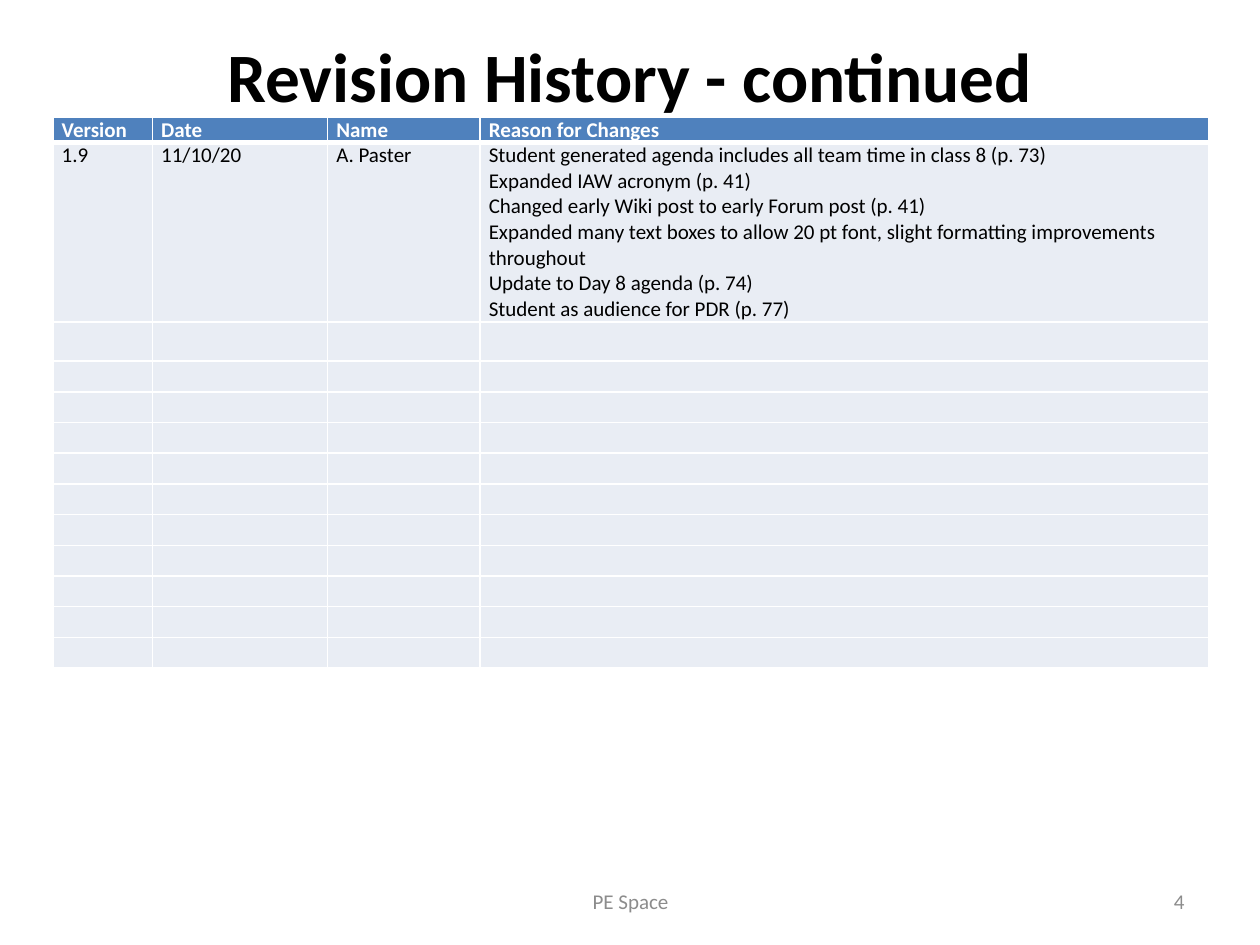
from lxml import etree
from pptx import Presentation
from pptx.dml.color import RGBColor
from pptx.enum.text import MSO_ANCHOR, PP_ALIGN
from pptx.oxml.ns import qn
from pptx.util import Inches, Pt

CENTER, RIGHT = PP_ALIGN.CENTER, PP_ALIGN.RIGHT
MIDDLE = MSO_ANCHOR.MIDDLE
FONT = "Calibri"
COLORS = {"text": "000000", "header": "4F81BD", "band": "E9EDF4",
          "line": "FFFFFF", "footer": "8C8C8C"}

COLUMN_WIDTHS = [0.79, 1.39, 1.21, 5.78]
ROW_HEIGHTS = [0.2, 1.42, 0.31] + [0.244] * 10
HEADERS = ["Version", "Date", "Name", "Reason for Changes"]
CHANGES = [
    "Student generated agenda includes all team time in class 8 (p. 73)",
    "Expanded IAW acronym (p. 41)",
    "Changed early Wiki post to early Forum post (p. 41)",
    "Expanded many text boxes to allow 20 pt font, slight formatting improvements throughout",
    "Update to Day 8 agenda (p. 74)",
    "Student as audience for PDR (p. 77)",
]
REVISION = ["1.9", "11/10/20", "A. Paster", "\n".join(CHANGES)]


def style_paragraph(para, size, color, bold=False, align=None):
    para.alignment = align
    font = para.font
    font.name, font.size, font.bold = FONT, Pt(size), bold
    font.color.rgb = RGBColor.from_string(COLORS[color])


def add_title(page, text):
    title = page.shapes.title
    title.left, title.top = Inches(0.5), Inches(0.3)
    title.width, title.height = Inches(9), Inches(1.25)
    title.text_frame.vertical_anchor = MIDDLE
    para = title.text_frame.paragraphs[0]
    para.text = text
    para.add_line_break()  # the open second line lifts the title above the table
    style_paragraph(para, 39.6, "text", bold=True, align=CENTER)


def set_borders(cell, top, bottom):
    properties = cell._tc.get_or_add_tcPr()
    for side, width in (("L", 1), ("R", 1), ("T", top), ("B", bottom)):
        line = etree.SubElement(properties, qn(f"a:ln{side}"), w=str(Pt(width)))
        fill = etree.SubElement(line, qn("a:solidFill"))
        etree.SubElement(fill, qn("a:srgbClr"), val=COLORS["line"])


def fill_cell(cell, text, is_header):
    cell.margin_left = cell.margin_right = Inches(0.07)
    cell.margin_top = cell.margin_bottom = 0
    cell.fill.solid()
    cell.fill.fore_color.rgb = RGBColor.from_string(
        COLORS["header" if is_header else "band"])
    cell.text = text
    for para in cell.text_frame.paragraphs:
        style_paragraph(para, 12, "line" if is_header else "text", bold=is_header)
        if not text:  # keeps an empty row from growing to the default size
            etree.SubElement(para._p, qn("a:endParaRPr"), sz="1200")


def add_revision_table(page):
    frame = page.shapes.add_table(
        len(ROW_HEIGHTS), len(COLUMN_WIDTHS), Inches(0.42), Inches(0.93),
        Inches(sum(COLUMN_WIDTHS)), Inches(sum(ROW_HEIGHTS)))
    table = frame.table
    table.horz_banding = False
    for column, width in zip(table.columns, COLUMN_WIDTHS):
        column.width = Inches(width)
    blank_rows = [[""] * len(HEADERS)] * (len(ROW_HEIGHTS) - 2)
    for index, texts in enumerate([HEADERS, REVISION] + blank_rows):
        row = table.rows[index]
        row.height = Inches(ROW_HEIGHTS[index])
        for cell, text in zip(row.cells, texts):
            set_borders(cell, top=3 if index == 1 else 1,
                        bottom=3 if index == 0 else 1)
            fill_cell(cell, text, is_header=index == 0)


def add_footer(page, text, left, width, align):
    box = page.shapes.add_textbox(Inches(left), Inches(6.95),
                                  Inches(width), Inches(0.4))
    box.text_frame.word_wrap = True
    box.text_frame.vertical_anchor = MIDDLE
    para = box.text_frame.paragraphs[0]
    para.text = text
    style_paragraph(para, 12, "footer", align=align)


def main():
    deck = Presentation()
    deck.slide_width, deck.slide_height = Inches(10), Inches(7.5)
    page = deck.slides.add_slide(deck.slide_layouts.get_by_name("Title Only"))
    add_title(page, "Revision History - continued")
    add_revision_table(page)
    add_footer(page, "PE Space", 3.42, 3.17, CENTER)
    add_footer(page, "4", 7.17, 2.33, RIGHT)
    deck.save("out.pptx")


if __name__ == "__main__":
    main()
